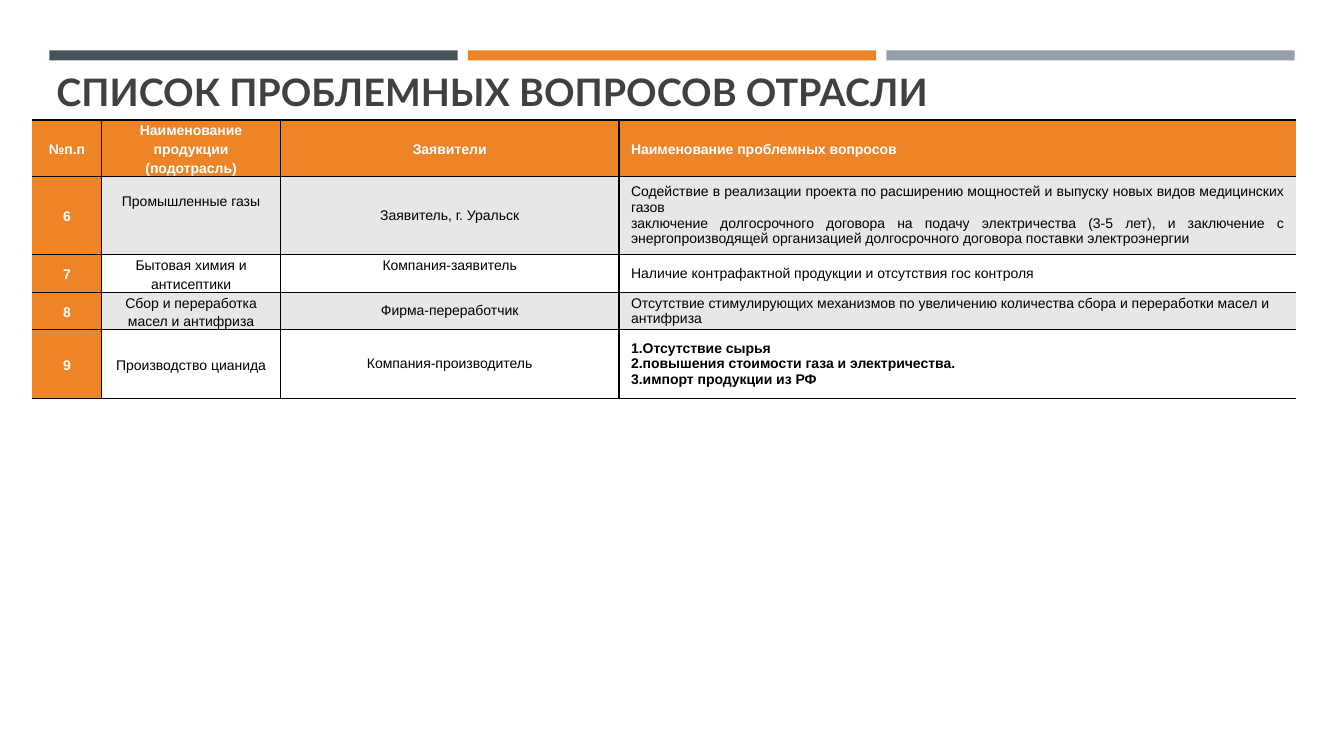
from lxml import etree
from pptx import Presentation
from pptx.dml.color import RGBColor
from pptx.enum import shapes, text
from pptx.oxml.ns import qn
from pptx.util import Inches, Pt

SLATE = RGBColor(0x46, 0x53, 0x59)
ORANGE = RGBColor(0xED, 0x84, 0x28)
GREY = RGBColor(0x96, 0x9F, 0xA7)
TITLE_GREY = RGBColor(0x40, 0x40, 0x40)
BAND = RGBColor(0xE7, 0xE7, 0xE7)
WHITE = RGBColor(0xFF, 0xFF, 0xFF)
BLACK = RGBColor(0, 0, 0)

prs = Presentation()
prs.slide_width, prs.slide_height = Inches(13.33), Inches(7.5)
slide = prs.slides.add_slide(prs.slide_layouts[5])

# Three bars across the top
for i, colour in enumerate((SLATE, ORANGE, GREY)):
    bar = slide.shapes.add_shape(shapes.MSO_SHAPE.RECTANGLE, Inches(0.49 + 4.15 * i),
                                 Inches(0.5), Inches(4.05), Inches(0.1))
    bar.shadow.inherit = False
    bar.fill.solid()
    bar.fill.fore_color.rgb = colour
    bar.line.fill.background()

# Title
title = slide.shapes.title
title.left, title.top = Inches(0.46), Inches(-0.11)
title.width, title.height = Inches(12.06), Inches(1.3)
title.text_frame.word_wrap = True
title.text_frame.auto_size = text.MSO_AUTO_SIZE.NONE
title.text_frame.vertical_anchor = text.MSO_ANCHOR.BOTTOM
heading = title.text_frame.paragraphs[0]
heading.alignment = text.PP_ALIGN.LEFT
heading.line_spacing = 0.9
run = heading.add_run()
run.text = "СПИСОК ПРОБЛЕМНЫХ ВОПРОСОВ ОТРАСЛИ"
run.font.name, run.font.size, run.font.bold = "Lato", Pt(27), True
run.font.color.rgb = TITLE_GREY

# Table of industry issues: each cell is a list of paragraphs
issues = [
    (["№п.п"], ["Наименование продукции (подотрасль)"], ["Заявители"],
     ["Наименование проблемных вопросов"]),
    (["6"], ["Промышленные газы"], ["Заявитель, г. Уральск"],
     ["Содействие в реализации проекта по расширению мощностей и выпуску новых видов "
      "медицинских газов",
      "заключение долгосрочного договора на подачу электричества (3-5 лет), и заключение с "
      "энергопроизводящей организацией долгосрочного договора поставки электроэнергии"]),
    (["7"], ["Бытовая химия и антисептики"], ["Компания-заявитель"],
     ["Наличие контрафактной продукции и отсутствия гос контроля"]),
    (["8"], ["Сбор и переработка масел и антифриза"], ["Фирма-переработчик"],
     ["Отсутствие стимулирующих механизмов по увеличению количества сбора и переработки "
      "масел и антифриза"]),
    (["9"], ["Производство цианида"], ["Компания-производитель"],
     ["1.Отсутствие сырья", "2.повышения стоимости газа и электричества.",
      "3.импорт продукции из РФ"]),
]
widths = [0.69, 1.77, 3.36, 6.71]
heights = [0.47, 0.78, 0.31, 0.31, 0.68]
raised = {(1, 1): 0.3, (2, 2): 0.16}  # bottom margins of cells whose text sits higher
table = slide.shapes.add_table(len(heights), len(widths), Inches(0.32), Inches(1.19),
                               Inches(sum(widths)), Inches(sum(heights))).table
table.first_row = table.horz_banding = False
for column, width in zip(table.columns, widths):
    column.width = Inches(width)
for row, height in zip(table.rows, heights):
    row.height = Inches(height)


def set_border(cell, side, points):
    line = etree.SubElement(cell._tc.get_or_add_tcPr(), qn("a:ln" + side), w=str(Pt(points)))
    if points:
        fill = etree.SubElement(line, qn("a:solidFill"))
        etree.SubElement(fill, qn("a:srgbClr"), val=str(BLACK))
    else:
        etree.SubElement(line, qn("a:noFill"))


for r, issue in enumerate(issues):
    for c, paragraphs in enumerate(issue):
        cell = table.cell(r, c)
        accent = r == 0 or c == 0
        set_border(cell, "L", 1 if c else 0)
        set_border(cell, "R", 1 if c < 3 else 0)
        set_border(cell, "T", 1 if r else 2)
        set_border(cell, "B", 1)
        cell.fill.solid()
        cell.fill.fore_color.rgb = ORANGE if accent else BAND if r % 2 else WHITE
        cell.vertical_anchor = text.MSO_ANCHOR.MIDDLE
        cell.margin_left = cell.margin_right = Inches(0.12)
        cell.margin_top = 0
        cell.margin_bottom = Inches(raised.get((r, c), 0))
        for i, words in enumerate(paragraphs):
            frame = cell.text_frame
            para = frame.add_paragraph() if i else frame.paragraphs[0]
            if c < 3:
                para.alignment = text.PP_ALIGN.CENTER
            else:
                para.alignment = text.PP_ALIGN.JUSTIFY if r < 3 else text.PP_ALIGN.LEFT
            para.line_spacing = 1.2 if r == 0 or c < 2 else 1.0
            run = para.add_run()
            run.text = words
            run.font.name, run.font.size = "Arial", Pt(10)
            run.font.bold = accent or (r, c) == (4, 3)
            run.font.color.rgb = WHITE if accent else BLACK

prs.save("out.pptx")
